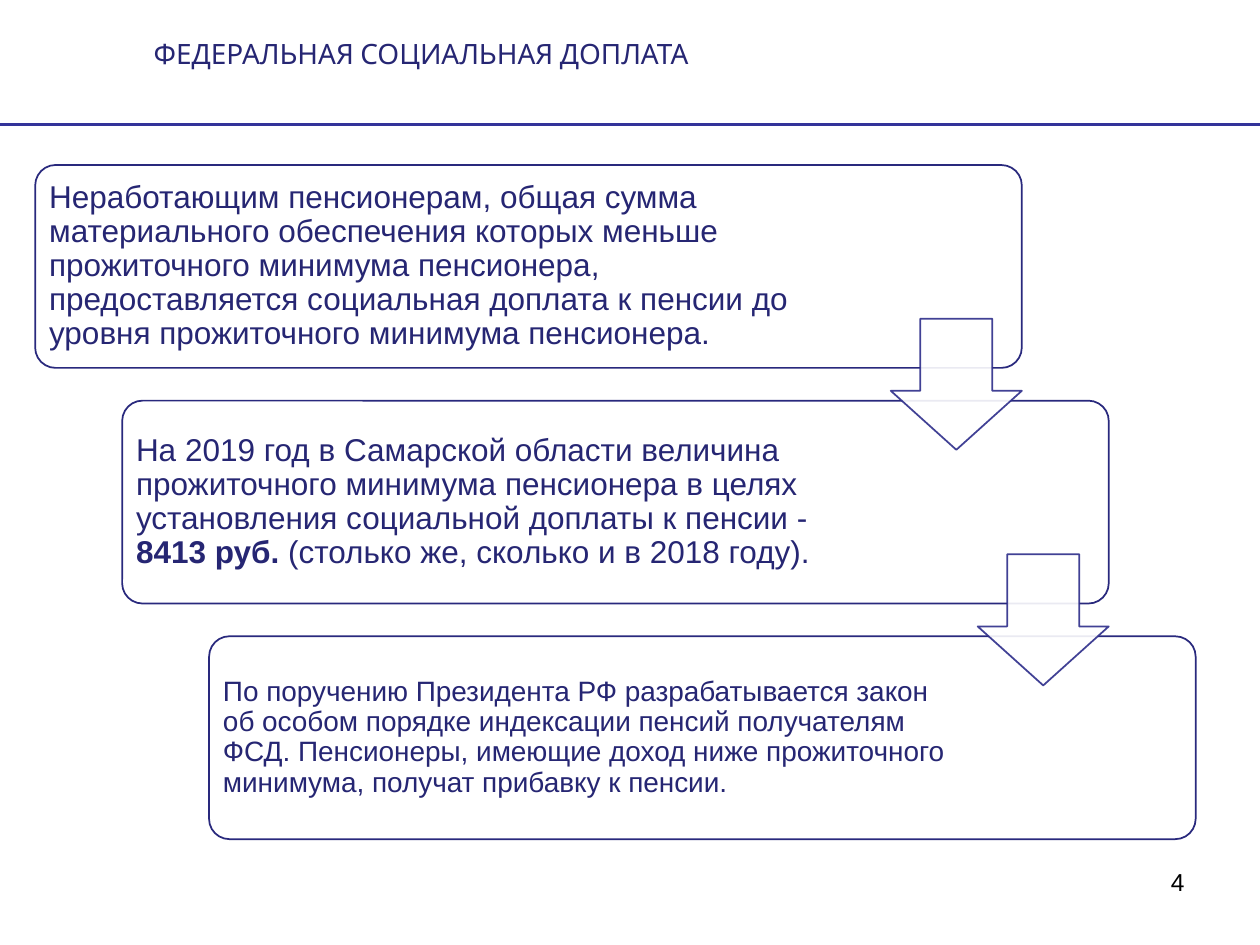
from lxml import etree
from pptx import Presentation
from pptx.dml.color import RGBColor
from pptx.enum.shapes import MSO_CONNECTOR, MSO_SHAPE
from pptx.enum.text import MSO_ANCHOR, PP_ALIGN
from pptx.oxml.ns import qn
from pptx.util import Inches, Pt

STRAIGHT = MSO_CONNECTOR.STRAIGHT
ROUND_RECT, DOWN_ARROW = MSO_SHAPE.ROUNDED_RECTANGLE, MSO_SHAPE.DOWN_ARROW
TOP, MIDDLE = MSO_ANCHOR.TOP, MSO_ANCHOR.MIDDLE
LEFT, RIGHT = PP_ALIGN.LEFT, PP_ALIGN.RIGHT

TEXT, BORDER, ARROW, RULE = "262673", "29297D", "2D2D8A", "333399"
WHITE, BLACK = "FFFFFF", "000000"

# Each step: text width, font size, runs of (text, bold)
STEPS = [
    (6.1, 18, [("Неработающим пенсионерам, общая сумма материального обеспечения "
                "которых меньше прожиточного минимума пенсионера, предоставляется "
                "социальная доплата к пенсии до уровня прожиточного минимума "
                "пенсионера.", False)]),
    (6, 18, [("На 2019 год в Самарской области величина прожиточного минимума "
              "пенсионера в целях установления социальной доплаты к пенсии - ", False),
             ("8413 руб. ", True),
             ("(столько же, сколько и в 2018 году).", False)]),
    (6, 16, [("По поручению Президента РФ разрабатывается закон об особом порядке "
              "индексации пенсий получателям ФСД. Пенсионеры, имеющие доход ниже "
              "прожиточного минимума, получат прибавку к пенсии.", False)]),
]


def rgb(color):
    return RGBColor.from_string(color)


def box(*lengths):
    return [Inches(v) for v in lengths]


def set_text(sp, runs, size, color, font="Arial", align=LEFT, anchor=TOP, inset=None):
    tf = sp.text_frame
    tf.word_wrap = True
    tf.vertical_anchor = anchor
    if inset is not None:
        tf.margin_left = tf.margin_top = tf.margin_right = tf.margin_bottom = Inches(inset)
    p = tf.paragraphs[0]
    p.alignment = align
    for text, bold in runs:
        r = p.add_run()
        r.text = text
        r.font.name, r.font.size, r.font.bold = font, Pt(size), bold
        r.font.color.rgb = rgb(color)
    return p


def add_outlined(s, kind, x, y, w, h, adjustments, line):
    sp = s.shapes.add_shape(kind, *box(x, y, w, h))
    sp.shadow.inherit = False
    for i, value in enumerate(adjustments):
        sp.adjustments[i] = value
    sp.fill.solid()
    sp.fill.fore_color.rgb = rgb(WHITE)
    sp.line.color.rgb = rgb(line)
    sp.line.width = Pt(1)
    return sp


def add_header(s, x, y, w, h):
    # Rule across the slide
    line = s.shapes.add_connector(STRAIGHT, *box(10, 0.99, 0, 0.99))
    line.line.color.rgb = rgb(RULE)
    line.line.width = Pt(1.5)
    etree.SubElement(line._element.spPr, qn("a:effectLst"))
    # Title
    title = s.shapes.title
    title.left, title.top, title.width, title.height = box(x, y, w, h)
    set_text(title, [("ФЕДЕРАЛЬНАЯ СОЦИАЛЬНАЯ ДОПЛАТА", False)], 16, TEXT,
             font="Karla", inset=0)


def add_step(s, x, y, w, h, text_w, size, runs):
    add_outlined(s, ROUND_RECT, x, y, w, h, [0.1], BORDER)
    pad = 0.05
    tb = s.shapes.add_textbox(*box(x + 0.04, y + pad, text_w, h - 2 * pad))
    p = set_text(tb, runs, size, TEXT, anchor=MIDDLE, inset=0.07)
    p.line_spacing = 0.9


def add_arrow(s, x, y, side):
    sp = add_outlined(s, DOWN_ARROW, x, y, side, side, [0.55, 0.45], ARROW)
    # Slight transparency of fill and line
    for clr in sp._element.spPr.iter(qn("a:srgbClr")):
        etree.SubElement(clr, qn("a:alpha"), val="90000")


def add_staircase(s, x, y, w, h):
    dx, dy, arrow = 0.69, 1.87, 1.04
    last = len(STEPS) - 1
    step_w, step_h = w - last * dx, h - last * dy
    for i, step in enumerate(STEPS):
        add_step(s, x + i * dx, y + i * dy, step_w, step_h, *step)
    # Arrows are flush with the right edge of the step they leave
    for i in range(last):
        add_arrow(s, x + i * dx + step_w - arrow, y + i * dy + 1.22, arrow)


def add_page_number(s, x, y, w, h):
    tb = s.shapes.add_textbox(*box(x, y, w, h))
    set_text(tb, [("4", False)], 14, BLACK, align=RIGHT)


def main():
    prs = Presentation()
    prs.slide_width, prs.slide_height = box(10, 7.5)
    s = prs.slides.add_slide(prs.slide_layouts[5])
    add_header(s, 1.22, 0.29, 7, 0.27)
    add_staircase(s, 0.28, 1.31, 9.21, 5.35)
    add_page_number(s, 7.17, 6.83, 2.33, 0.52)
    prs.save("out.pptx")


if __name__ == "__main__":
    main()
